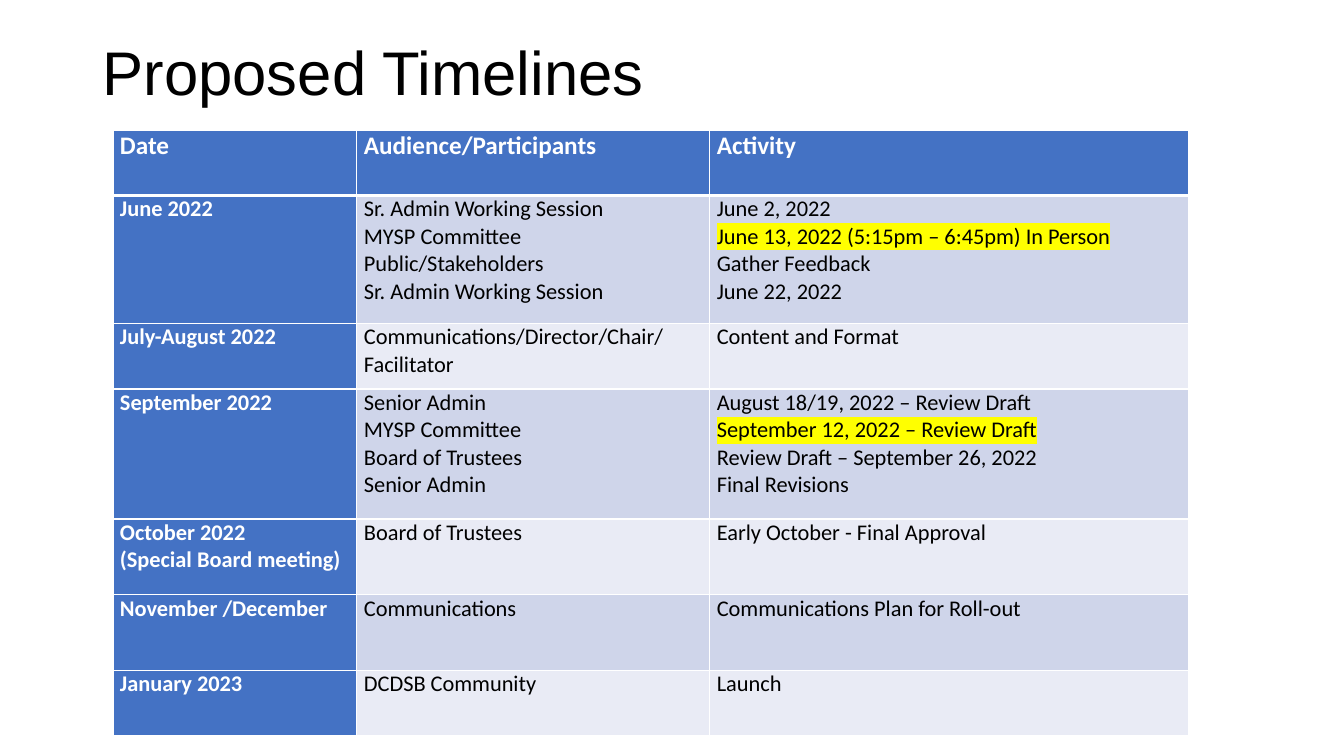
from dataclasses import dataclass

from lxml.etree import SubElement
from pptx import Presentation
from pptx.dml.color import RGBColor
from pptx.enum.text import MSO_ANCHOR
from pptx.oxml import parse_xml
from pptx.oxml.ns import nsdecls, qn
from pptx.table import _Cell
from pptx.text.text import TextFrame
from pptx.util import Inches, Pt

BLUE, WHITE, BLACK, YELLOW = "4472C4", "FFFFFF", "000000", "FFFF00"
BANDS = ("CFD5EA", "E9EBF5")
COLUMN_WIDTHS = (2.42, 3.5, 4.75)


@dataclass
class TimelineRow:
    height: float
    date: str
    audience: str
    activity: str
    highlighted: str = ""


HEADER = TimelineRow(0.65, "Date", "Audience/Participants", "Activity")
STAGES = [
    TimelineRow(
        1.27, "June 2022",
        "Sr. Admin Working Session\nMYSP Committee\nPublic/Stakeholders\nSr. Admin Working Session",
        "June 2, 2022\nJune 13, 2022 (5:15pm – 6:45pm) In Person\nGather Feedback\nJune 22, 2022",
        highlighted="June 13, 2022 (5:15pm – 6:45pm) In Person"),
    TimelineRow(0.65, "July-August 2022", "Communications/Director/Chair/\nFacilitator",
                "Content and Format"),
    TimelineRow(
        1.29, "September 2022",
        "Senior Admin\nMYSP Committee\nBoard of Trustees\nSenior Admin",
        "August 18/19, 2022 – Review Draft\nSeptember 12, 2022 – Review Draft\n"
        "Review Draft – September 26, 2022\nFinal Revisions",
        highlighted="September 12, 2022 – Review Draft"),
    TimelineRow(0.75, "October 2022\n(Special Board meeting)", "Board of Trustees",
                "Early October - Final Approval"),
    TimelineRow(0.75, "November /December", "Communications", "Communications Plan for Roll-out"),
    TimelineRow(0.65, "January 2023", "DCDSB Community", "Launch"),
]


def rgb(value: str) -> RGBColor:
    return RGBColor.from_string(value)


def write_text(frame: TextFrame, text: str, *, font: str = "Calibri", size: float = 16,
               color: str = BLACK, bold: bool = False, line_spacing: float = 1.0,
               highlighted: str = "") -> None:
    """Write one paragraph per line of text."""
    for index, line in enumerate(text.split("\n")):
        para = frame.paragraphs[0] if index == 0 else frame.add_paragraph()
        para.line_spacing = line_spacing
        span = para.add_run()
        span.text = line
        span.font.name, span.font.size, span.font.bold = font, Pt(size), bold
        span.font.color.rgb = rgb(color)
        if line == highlighted:
            marker = parse_xml(f'<a:highlight {nsdecls("a")}><a:srgbClr val="{YELLOW}"/></a:highlight>')
            span.font._element.find(qn("a:solidFill")).addnext(marker)


def style_cell(cell: _Cell, fill: str, top: float, bottom: float) -> None:
    """Set margins, white borders (widths in points) and fill."""
    cell.margin_left = cell.margin_right = Inches(0.07)
    cell.margin_top = cell.margin_bottom = 0
    properties = cell._tc.get_or_add_tcPr()
    for side, width in (("L", 1), ("R", 1), ("T", top), ("B", bottom)):
        border = SubElement(properties, qn(f"a:ln{side}"), w=str(Pt(width)))
        SubElement(SubElement(border, qn("a:solidFill")), qn("a:srgbClr"), val=WHITE)
    cell.fill.solid()
    cell.fill.fore_color.rgb = rgb(fill)


def main() -> None:
    deck = Presentation()
    deck.slide_width, deck.slide_height = Inches(13.33), Inches(7.5)
    page = deck.slides.add_slide(deck.slide_layouts[6])

    # Title
    box = page.shapes.add_textbox(Inches(0.92), Inches(0.02), Inches(11.5), Inches(1.45))
    box.text_frame.word_wrap = True
    box.text_frame.vertical_anchor = MSO_ANCHOR.MIDDLE
    write_text(box.text_frame, "Proposed Timelines", font="Arial", size=44, line_spacing=0.9)

    # Timeline table
    rows = [HEADER, *STAGES]
    table = page.shapes.add_table(
        len(rows), len(COLUMN_WIDTHS), Inches(1.12), Inches(1.29),
        Inches(sum(COLUMN_WIDTHS)), Inches(sum(row.height for row in rows))).table
    for column, width in zip(table.columns, COLUMN_WIDTHS):
        column.width = Inches(width)

    # Blue header and date column, banded body
    for row_index, row in enumerate(rows):
        table.rows[row_index].height = Inches(row.height)
        is_header = row_index == 0
        for column_index, text in enumerate((row.date, row.audience, row.activity)):
            cell = table.cell(row_index, column_index)
            is_label = is_header or column_index == 0
            style_cell(cell, BLUE if is_label else BANDS[(row_index - 1) % 2],
                       top=3 if row_index == 1 else 1, bottom=3 if is_header else 1)
            write_text(cell.text_frame, text, size=18 if is_header else 16,
                       color=WHITE if is_label else BLACK, bold=is_label,
                       highlighted=row.highlighted)

    deck.save("out.pptx")


if __name__ == "__main__":
    main()
